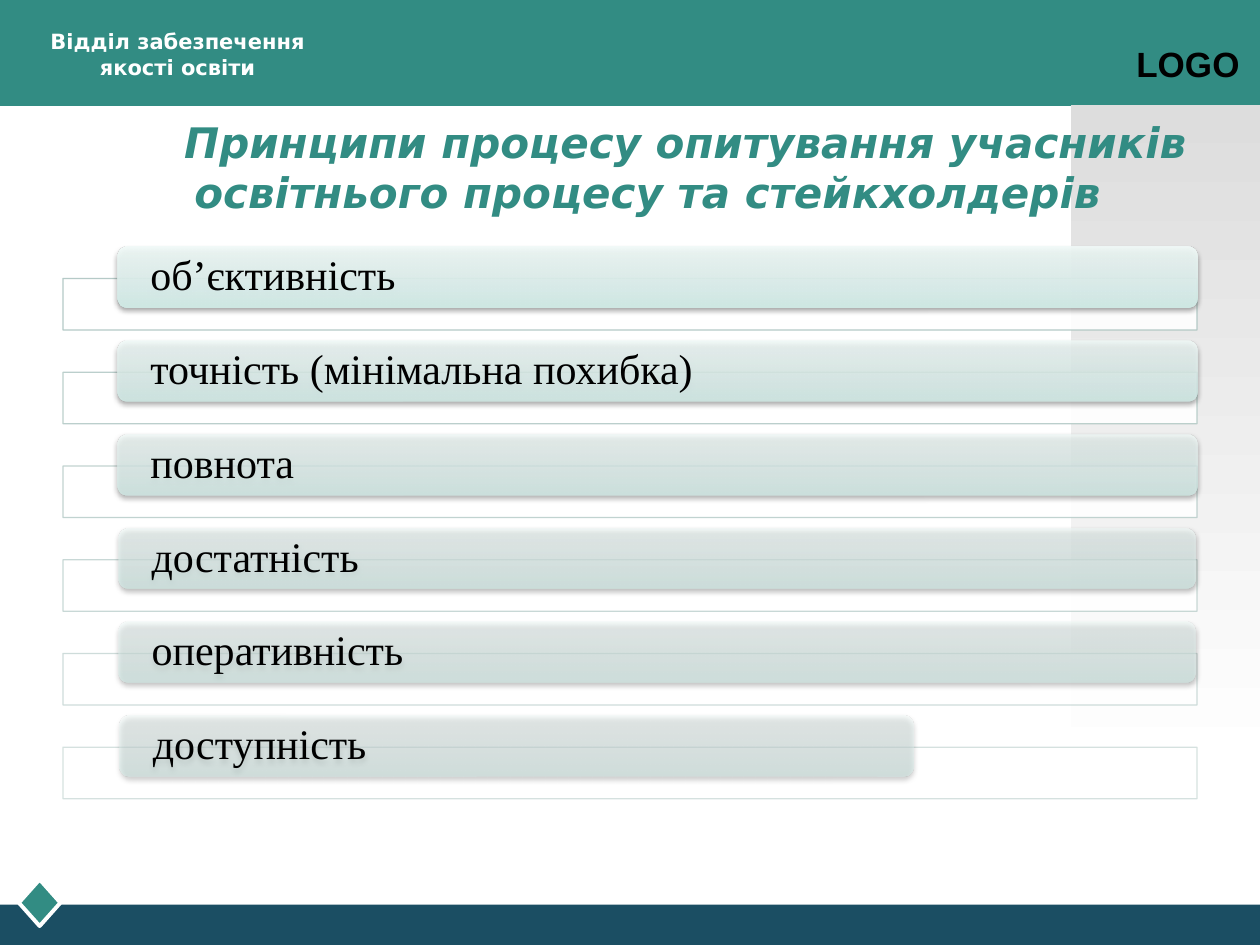
from lxml import etree
from pptx import Presentation
from pptx.dml.color import RGBColor
from pptx.enum.shapes import MSO_SHAPE
from pptx.enum.text import MSO_ANCHOR, PP_ALIGN
from pptx.oxml.ns import qn
from pptx.util import Inches, Pt

RECT, ROUND, DIAMOND = MSO_SHAPE.RECTANGLE, MSO_SHAPE.ROUNDED_RECTANGLE, MSO_SHAPE.DIAMOND
MIDDLE, CENTER, LEFT = MSO_ANCHOR.MIDDLE, PP_ALIGN.CENTER, PP_ALIGN.LEFT
TEAL, NAVY, WHITE, BLACK = "328C83", "1B4E63", "FFFFFF", "000000"

prs = Presentation()
prs.slide_width, prs.slide_height = Inches(10), Inches(7.5)
slide = prs.slides.add_slide(prs.slide_layouts[6])


def rgb(value):
    return RGBColor.from_string(value)


def add_color(parent, value, opacity):
    """Append a colour with an opacity in percent to an XML element."""
    color = etree.SubElement(parent, qn("a:srgbClr"), val=value)
    etree.SubElement(color, qn("a:alpha"), val=str(opacity * 1000))


# Header band, footer band and footer diamond
for kind, x, y, w, h, color in [
    (RECT, 0, 0, 10, 0.84, TEAL),
    (RECT, 0, 7.18, 10, 0.33, NAVY),
    (DIAMOND, 0.15, 6.98, 0.33, 0.37, TEAL),
]:
    s = slide.shapes.add_shape(kind, Inches(x), Inches(y), Inches(w), Inches(h))
    s.shadow.inherit = False
    s.fill.solid()
    s.fill.fore_color.rgb = rgb(color)
    if kind == DIAMOND:
        s.line.color.rgb = rgb(WHITE)
        s.line.width = Pt(2.25)
    else:
        s.line.fill.background()

# Grey fading side panel
s = slide.shapes.add_shape(RECT, Inches(8.5), Inches(0.83), Inches(1.5), Inches(5.25))
s.shadow.inherit = False
s.line.fill.background()
s.fill.gradient()
s.fill.gradient_angle = 270
for stop, position, color in zip(s.fill.gradient_stops, (0, 1), ("DDDDDD", WHITE)):
    stop.position = position
    stop.color.rgb = rgb(color)

# Placeholder word, department name and slide title
for text, x, y, w, h, font, size, color, align in [
    ("LOGO", 8.92, 0.29, 1.08, 0.43, "Arial", 20, BLACK, LEFT),
    ("Відділ забезпечення якості освіти", 0.12, 0.18, 2.58, 0.66,
     "DejaVu Sans", 12, WHITE, CENTER),
    ("Принципи процесу опитування учасників освітнього процесу та стейкхолдерів",
     0.28, 0.87, 9.72, 0.91, "DejaVu Sans", 24, TEAL, CENTER),
]:
    s = slide.shapes.add_textbox(Inches(x), Inches(y), Inches(w), Inches(h))
    tf = s.text_frame
    tf.word_wrap = True
    p = tf.paragraphs[0]
    p.text = text
    p.alignment = align
    p.font.name, p.font.size, p.font.bold = font, Pt(size), True
    p.font.color.rgb = rgb(color)

# The title, last in the list, is italic with an indented first line
tf.vertical_anchor = MIDDLE
p.font.italic = True
p._p.get_or_add_pPr().set("indent", str(Inches(0.6)))

# Principles: an outlined strip behind a translucent bar, fading row by row
principles = [
    ("об’єктивність", 0.93, 8.57),
    ("точність (мінімальна похибка)", 0.93, 8.57),
    ("повнота", 0.93, 8.57),
    ("достатність", 0.94, 8.55),
    ("оперативність", 0.94, 8.55),
    ("доступність", 0.95, 6.3),
]
step = 3.72 / (len(principles) - 1)
for i, (text, x, w) in enumerate(principles):
    opacity = 90 - 8 * i

    s = slide.shapes.add_shape(RECT, Inches(0.5), Inches(2.21 + i * step), Inches(9), Inches(0.41))
    s.shadow.inherit = False
    s.fill.solid()
    s.fill.fore_color.rgb = rgb(WHITE)
    s.line.color.rgb = rgb("ADC5C1")
    s.line.width = Pt(0.75)
    fill_color, line_color = s._element.spPr.iter(qn("a:srgbClr"))
    etree.SubElement(fill_color, qn("a:alpha"), val="90000")
    etree.SubElement(line_color, qn("a:alpha"), val=str(opacity * 1000))

    s = slide.shapes.add_shape(ROUND, Inches(x), Inches(1.96 + i * step), Inches(w), Inches(0.48))
    s.line.fill.background()
    s.fill.gradient()
    s.fill.gradient_angle = 90
    stops = s._element.spPr.find(".//" + qn("a:gsLst"))
    stops[:] = []
    for position, color in [(0, "D2EEE9"), (35, "DEF2EF"), (100, "F2FBF9")]:
        stop = etree.SubElement(stops, qn("a:gs"), pos=str(position * 1000))
        add_color(stop, color, opacity)
    s.shadow.inherit = False
    shadow = etree.SubElement(
        s._element.spPr.find(qn("a:effectLst")), qn("a:outerShdw"),
        blurRad=str(Pt(3.1)), dist=str(Pt(1.6)), dir="5400000", rotWithShape="0")
    add_color(shadow, BLACK, 38)

    tf = s.text_frame
    tf.word_wrap = True
    tf.vertical_anchor = MIDDLE
    tf.margin_left = tf.margin_right = Inches(0.24)
    tf.margin_top = tf.margin_bottom = 0
    p = tf.paragraphs[0]
    p.text = text
    p.alignment = LEFT
    p.line_spacing = 0.9
    p.font.name, p.font.size = "Times New Roman", Pt(24)
    p.font.color.rgb = rgb(BLACK)

prs.save("out.pptx")
